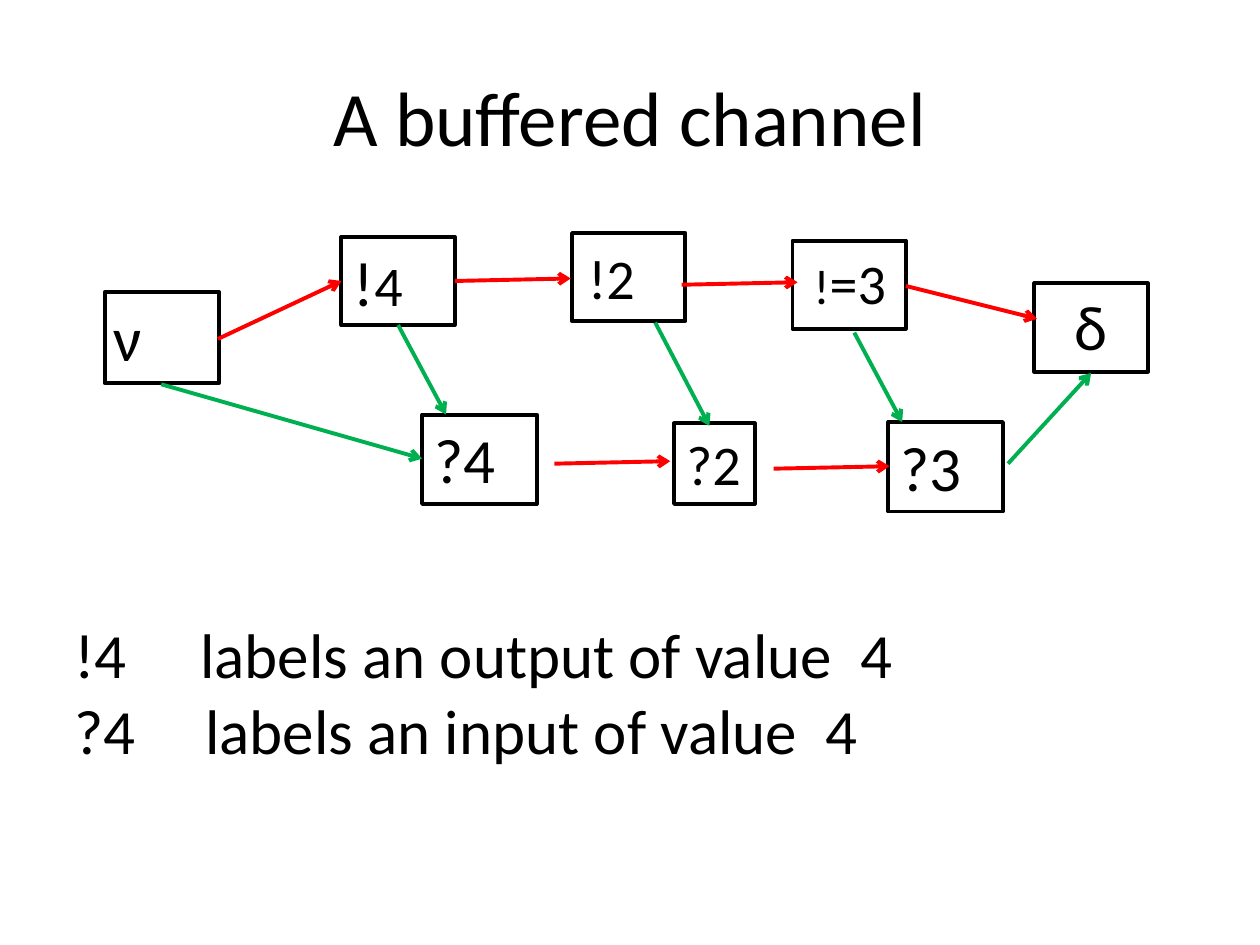
"""Builds the slide that draws a buffered channel as a graph of events."""
import pptx
import pptx.dml.color
import pptx.enum.shapes
import pptx.enum.text
import pptx.oxml.ns
import pptx.util
from lxml import etree

Inches = pptx.util.Inches
ALIGN = pptx.enum.text.PP_ALIGN
ANCHOR = pptx.enum.text.MSO_ANCHOR

COLOURS = {"ink": "000000", "next": "FF0000", "cause": "00B050"}
FONT = "Calibri"
LINE_WIDTH = 2.25

TITLE = ((0.5, 0.29, 9, 1.25), "A buffered channel", 44)
LEGEND_AREA = (0.49, 4.46, 9, 2.05)
LEGEND = [
    ("!4\tlabels an output of value  4", 1.0),
    ("?4\tlabels an input of value  4", 1.04),
]
EVENT_BOXES = [
    (0.83, 2.32, 0.91, 0.72),
    (2.71, 1.88, 0.9, 0.7),
    (4.54, 1.85, 0.9, 0.7),
    (6.29, 1.91, 0.9, 0.7),
    (8.21, 2.25, 0.9, 0.7),
]
EVENT_LABELS = [
    ((0.8, 2.32, 0.91, 0.71), [("ν", 36)], True),
    ((2.71, 1.88, 0.59, 0.71), [("!", 36), ("4", 32)], False),
    ((4.57, 1.88, 0.58, 0.64), [("!2", 32)], False),
    ((6.36, 1.92, 0.78, 0.64), [("!", 28), ("=3", 32)], False),
    ((8.43, 2.23, 0.47, 0.71), [("δ", 36)], False),
]
INPUT_BOXES = [
    ((3.35, 3.29, 0.91, 0.71), [("?4", 36)], True),
    ((5.35, 3.36, 0.64, 0.64), [("?2", 32)], False),
    ((7.05, 3.35, 0.91, 0.71), [("?3", 36)], True),
]
ARROWS = {
    "next": [
        (1.73, 2.69, 2.71, 2.23),
        (3.61, 2.23, 4.53, 2.21),
        (5.41, 2.26, 6.33, 2.24),
        (7.19, 2.27, 8.23, 2.53),
        (4.4, 3.68, 5.32, 3.66),
        (6.14, 3.72, 7.06, 3.7),
    ],
    "cause": [
        (1.28, 3.05, 3.35, 3.64),
        (3.16, 2.58, 3.54, 3.29),
        (5.2, 2.56, 5.63, 3.38),
        (6.78, 2.64, 7.16, 3.35),
        (8, 3.68, 8.66, 2.96),
    ],
}


def colour(name):
    return pptx.dml.color.RGBColor.from_string(COLOURS[name])


def add_element(parent, tag, **attributes):
    return etree.SubElement(parent, pptx.oxml.ns.qn(tag), attributes)


def style_line(line, name):
    line.color.rgb = colour(name)
    line.width = pptx.util.Pt(LINE_WIDTH)


def set_frame(frame, **formats):
    for name, value in formats.items():
        setattr(frame, name, value)


def write(para, spans, align=ALIGN.LEFT):
    para.alignment = align
    for text, size in spans:
        span = para.add_run()
        span.text = text
        formats = {"name": FONT, "size": pptx.util.Pt(size)}
        for name, value in formats.items():
            setattr(span.font, name, value)
        span.font.color.rgb = colour("ink")


def add_text(page, area, **formats):
    box = page.shapes.add_textbox(*map(Inches, area))
    set_frame(box.text_frame, **formats)
    return box.text_frame


def add_box(page, area):
    box = page.shapes.add_shape(
        pptx.enum.shapes.MSO_SHAPE.RECTANGLE, *map(Inches, area))
    box.shadow.inherit = False
    box.fill.background()
    style_line(box.line, "ink")
    return box


def add_arrow(page, ends, name):
    arrow = page.shapes.add_connector(
        pptx.enum.shapes.MSO_CONNECTOR.STRAIGHT, *map(Inches, ends))
    style_line(arrow.line, name)
    add_element(arrow.line._get_or_add_ln(), "a:tailEnd", type="arrow")
    add_element(arrow._element.spPr, "a:effectLst")


def add_legend(page):
    frame = add_text(page, LEGEND_AREA, word_wrap=True,
                     vertical_anchor=ANCHOR.MIDDLE)
    for index, (text, stop) in enumerate(LEGEND):
        para = frame.add_paragraph() if index else frame.paragraphs[0]
        write(para, [(text, 36)])
        stops = add_element(para._p.get_or_add_pPr(), "a:tabLst")
        add_element(stops, "a:tab", pos=str(Inches(stop)), algn="l")


def main():
    deck = pptx.Presentation()
    deck.slide_width, deck.slide_height = Inches(10), Inches(7.5)
    page = deck.slides.add_slide(deck.slide_layouts[6])

    area, text, size = TITLE
    frame = add_text(page, area, word_wrap=True, vertical_anchor=ANCHOR.MIDDLE)
    write(frame.paragraphs[0], [(text, size)], ALIGN.CENTER)
    add_legend(page)

    for area in EVENT_BOXES:
        add_box(page, area)
    for area, spans, wrap in EVENT_LABELS:
        frame = add_text(page, area, word_wrap=wrap)
        write(frame.paragraphs[0], spans)
    for area, spans, wrap in INPUT_BOXES:
        frame = add_box(page, area).text_frame
        set_frame(frame, word_wrap=wrap, vertical_anchor=ANCHOR.TOP)
        write(frame.paragraphs[0], spans)
    for name, group in ARROWS.items():
        for ends in group:
            add_arrow(page, ends, name)

    deck.save("out.pptx")


if __name__ == "__main__":
    main()
